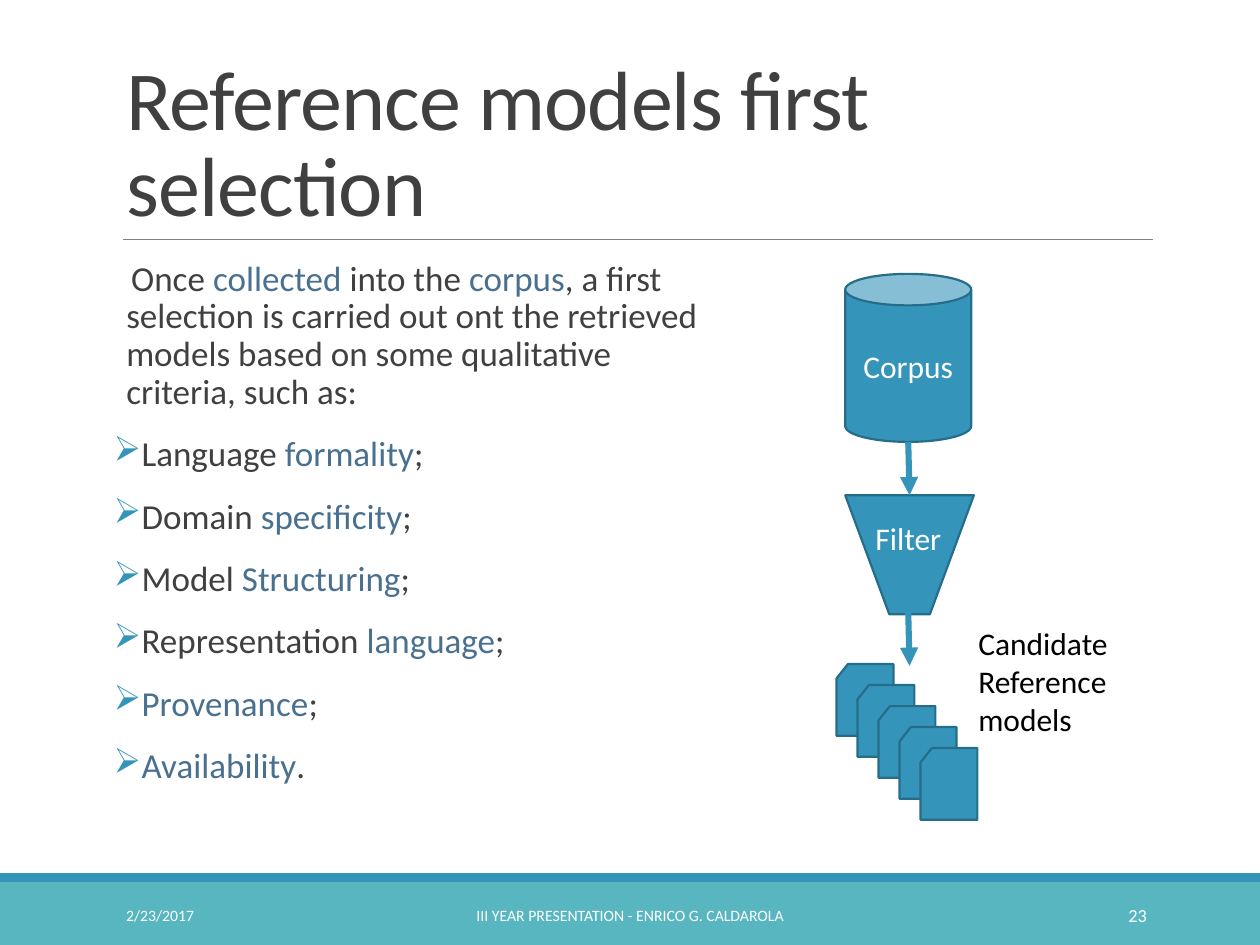
from dataclasses import dataclass

from lxml.etree import SubElement
from pptx import Presentation
from pptx.dml.color import RGBColor
from pptx.enum.shapes import MSO_CONNECTOR, MSO_SHAPE
from pptx.enum.text import MSO_ANCHOR, MSO_AUTO_SIZE, PP_ALIGN
from pptx.oxml.ns import qn
from pptx.util import Pt


@dataclass(frozen=True)
class Theme:
    font: str = "Calibri"
    text: str = "404040"
    emphasis: str = "4A7090"
    primary: str = "3494BA"
    outline: str = "266D8A"
    footer: str = "58B6C0"
    rule: str = "808080"
    white: str = "FFFFFF"
    black: str = "000000"
    title_size: float = 48
    body_size: float = 20
    label_size: float = 18
    number_size: float = 10.5
    footer_size: float = 9


THEME = Theme()
INTRO = ("Once *collected *into the *corpus*, a first selection is carried out "
         "ont the retrieved models based on some qualitative criteria, such as:")
CRITERIA = ["Language *formality*;", "Domain *specificity*;", "Model *Structuring*;",
            "Representation *language*;", "*Provenance*;", "*Availability*."]


def apply(obj, formats):
    for name, value in formats.items():
        setattr(obj, name, value)


def points(*values):
    return [Pt(v) for v in values]


def add_run(p, text, size, color):
    r = p.add_run()
    r.text = text
    apply(r.font, {"name": THEME.font, "size": Pt(size)})
    r.font.color.rgb = RGBColor.from_string(color)
    return r


def add_title(s, text):
    sp = s.shapes.title
    apply(sp, dict(zip(("left", "top", "width", "height"), points(65, 22.5, 594, 114.5))))
    tf = sp.text_frame
    apply(tf, {"word_wrap": True, "auto_size": MSO_AUTO_SIZE.NONE,
               "vertical_anchor": MSO_ANCHOR.BOTTOM})
    p = tf.paragraphs[0]
    apply(p, {"alignment": PP_ALIGN.LEFT, "line_spacing": 0.85})
    r = add_run(p, text, THEME.title_size, THEME.text)
    r.font._element.set("spc", "-50")


def add_bullet(p, char):
    pPr = p._p.get_or_add_pPr()
    pPr.set("marL", str(Pt(7.2)))
    pPr.set("indent", str(Pt(-7.2)))
    color = SubElement(pPr, qn("a:buClr"))
    SubElement(color, qn("a:srgbClr"), val=THEME.primary)
    SubElement(pPr, qn("a:buChar"), char=char)


def add_body(s):
    tf = s.shapes.add_textbox(*points(65, 145.5, 340.5, 317)).text_frame
    apply(tf, {"word_wrap": True, "margin_left": 0, "margin_right": 0})
    for i, text in enumerate([INTRO] + CRITERIA):
        p = tf.add_paragraph() if i else tf.paragraphs[0]
        apply(p, {"line_spacing": 0.9, "space_before": Pt(12), "space_after": Pt(2)})
        add_bullet(p, "➢" if i else " ")
        for j, part in enumerate(text.split("*")):
            if part:
                add_run(p, part, THEME.body_size, THEME.emphasis if j % 2 else THEME.text)


def add_text(s, box, lines, size, color, align=PP_ALIGN.LEFT,
             anchor=MSO_ANCHOR.TOP, wrap=False):
    tf = s.shapes.add_textbox(*points(*box)).text_frame
    apply(tf, {"word_wrap": wrap, "vertical_anchor": anchor,
               "auto_size": MSO_AUTO_SIZE.NONE if wrap else MSO_AUTO_SIZE.SHAPE_TO_FIT_TEXT})
    for i, line in enumerate(lines):
        p = tf.add_paragraph() if i else tf.paragraphs[0]
        p.alignment = align
        add_run(p, line, size, color)


def add_shape(s, kind, box, fill, outline=None):
    sp = s.shapes.add_shape(kind, *points(*box))
    sp.shadow.inherit = False
    sp.fill.solid()
    sp.fill.fore_color.rgb = RGBColor.from_string(fill)
    if outline:
        sp.line.color.rgb = RGBColor.from_string(outline)
        sp.line.width = Pt(1.25)
    else:
        sp.line.fill.background()
    return sp


def add_line(s, ends, color, width, arrow=False):
    line = s.shapes.add_connector(MSO_CONNECTOR.STRAIGHT, *points(*ends))
    line.line.color.rgb = RGBColor.from_string(color)
    line.line.width = Pt(width)
    if arrow:
        SubElement(line.line._get_or_add_ln(), qn("a:tailEnd"), type="triangle")
    SubElement(line._element.spPr, qn("a:effectLst"))


def add_footer(s):
    add_shape(s, MSO_SHAPE.RECTANGLE, (0, 504, 720, 36), THEME.footer)
    add_shape(s, MSO_SHAPE.RECTANGLE, (0, 499, 720, 5), THEME.primary)
    entries = [
        (65, 146, "2/23/2017", THEME.footer_size, PP_ALIGN.LEFT),
        (217.5, 285, "III YEAR PRESENTATION - ENRICO G. CALDAROLA",
         THEME.footer_size, PP_ALIGN.CENTER),
        (584.5, 78, "23", THEME.number_size, PP_ALIGN.RIGHT),
    ]
    for left, width, text, size, align in entries:
        add_text(s, (left, 508.5, width, 28.8), [text], size, THEME.white,
                 align, MSO_ANCHOR.MIDDLE, wrap=True)


def add_flow(s):
    funnel = add_shape(s, MSO_SHAPE.TRAPEZOID, (483, 283, 73.5, 68),
                       THEME.primary, THEME.outline)
    funnel.rotation = 180
    funnel.adjustments[0] = 0.37

    corpus = add_shape(s, MSO_SHAPE.CAN, (483, 156.5, 72, 96), THEME.primary, THEME.outline)
    corpus.text_frame.vertical_anchor = MSO_ANCHOR.MIDDLE
    p = corpus.text_frame.paragraphs[0]
    p.alignment = PP_ALIGN.CENTER
    add_run(p, "Corpus", THEME.label_size, THEME.white)

    for i in range(5):
        add_shape(s, MSO_SHAPE.FLOWCHART_CARD, (478 + 12 * i, 379.5 + 12 * i, 32.5, 41),
                  THEME.primary, THEME.outline)
    for top, bottom in ((252.5, 283), (350, 380.5)):
        add_line(s, (519, top, 519.75, bottom), THEME.primary, 3.5, arrow=True)

    add_text(s, (493.2, 293.2, 52.6, 29), ["Filter"], THEME.label_size, THEME.white)
    add_text(s, (552, 353, 93.5, 72.7), ["Candidate", "Reference", "models"],
             THEME.label_size, THEME.black)


def main():
    prs = Presentation()
    apply(prs, {"slide_width": Pt(720), "slide_height": Pt(540)})
    s = prs.slides.add_slide(prs.slide_layouts[5])
    add_title(s, "Reference models first selection")
    add_line(s, (70.5, 136.8, 659, 136.8), THEME.rule, 0.5)
    add_body(s)
    add_footer(s)
    add_flow(s)
    prs.save("out.pptx")


if __name__ == "__main__":
    main()
